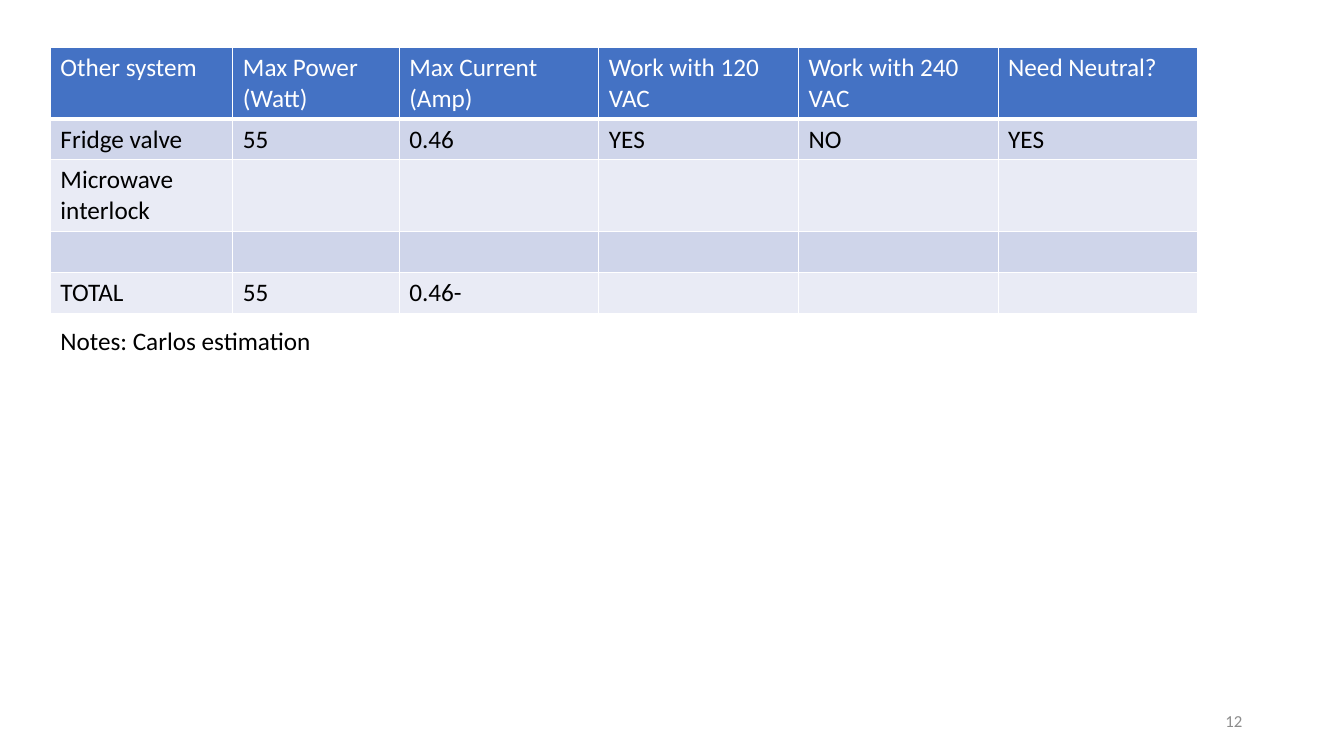
from dataclasses import dataclass

from lxml.etree import SubElement
from pptx import Presentation
from pptx.dml.color import RGBColor as Rgb
from pptx.enum.text import MSO_ANCHOR as Anchor, PP_ALIGN as Align
from pptx.oxml.ns import qn
from pptx.util import Inches, Pt


@dataclass(frozen=True)
class Theme:
    font: str = "Calibri"
    body_size: int = 18
    number_size: int = 12
    text: str = "000000"
    header_text: str = "FFFFFF"
    number_text: str = "8C8C8C"
    header_fill: str = "4472C4"
    bands: tuple = ("CFD5EA", "E9EBF5")
    border: str = "FFFFFF"


theme = Theme()


def add_run(paragraph, text, size, color):
    run = paragraph.add_run()
    run.text = text
    run.font.name = theme.font
    run.font.size = Pt(size)
    run.font.bold = False
    run.font.color.rgb = Rgb.from_string(color)


def add_borders(cell, bottom_width):
    properties = cell._tc.get_or_add_tcPr()
    for side, width in (("L", 1), ("R", 1), ("T", 1), ("B", bottom_width)):
        line = SubElement(properties, qn(f"a:ln{side}"), w=str(Pt(width)))
        fill = SubElement(line, qn("a:solidFill"))
        SubElement(fill, qn("a:srgbClr"), val=theme.border)


# Slide
deck = Presentation()
deck.slide_width, deck.slide_height = Inches(13.33), Inches(7.5)
slide = deck.slides.add_slide(deck.slide_layouts[6])

# Power table
loads = [
    ["Other system", "Max Power (Watt)", "Max Current (Amp)",
     "Work with 120 VAC", "Work with 240 VAC", "Need Neutral?"],
    ["Fridge valve", "55", "0.46", "YES", "NO", "YES"],
    ["Microwave interlock", "", "", "", "", ""],
    ["", "", "", "", "", ""],
    ["TOTAL", "55", "0.46-", "", "", ""],
]
column_widths = [1.81, 1.65] + [1.98] * 4
row_heights = [0.7, 0.4, 0.7, 0.4, 0.4]

power_table = slide.shapes.add_table(
    len(loads), len(column_widths), Inches(0.5), Inches(0.47),
    Inches(sum(column_widths)), Inches(sum(row_heights))).table
power_table.first_row = True
power_table.horz_banding = True
for column, width in zip(power_table.columns, column_widths):
    column.width = Inches(width)

for row_index, load in enumerate(loads):
    power_table.rows[row_index].height = Inches(row_heights[row_index])
    is_header = row_index == 0
    row_fill = theme.header_fill if is_header else theme.bands[(row_index - 1) % 2]
    row_text = theme.header_text if is_header else theme.text
    for column_index, entry in enumerate(load):
        cell = power_table.cell(row_index, column_index)
        add_borders(cell, 3 if is_header else 1)
        cell.fill.solid()
        cell.fill.fore_color.rgb = Rgb.from_string(row_fill)
        paragraph = cell.text_frame.paragraphs[0]
        if entry:
            add_run(paragraph, entry, theme.body_size, row_text)
        else:
            paragraph.font.size = Pt(theme.body_size)

# Notes line
notes = slide.shapes.add_textbox(
    Inches(0.5), Inches(3.18), Inches(3.72), Inches(0.4)).text_frame
notes.word_wrap = True
add_run(notes.paragraphs[0], "Notes: Carlos estimation", theme.body_size, theme.text)

# Page number
page_number = slide.shapes.add_textbox(
    Inches(9.42), Inches(6.95), Inches(3), Inches(0.4)).text_frame
page_number.word_wrap = True
page_number.vertical_anchor = Anchor.MIDDLE
page_number.paragraphs[0].alignment = Align.RIGHT
add_run(page_number.paragraphs[0], "12", theme.number_size, theme.number_text)

deck.save("out.pptx")
